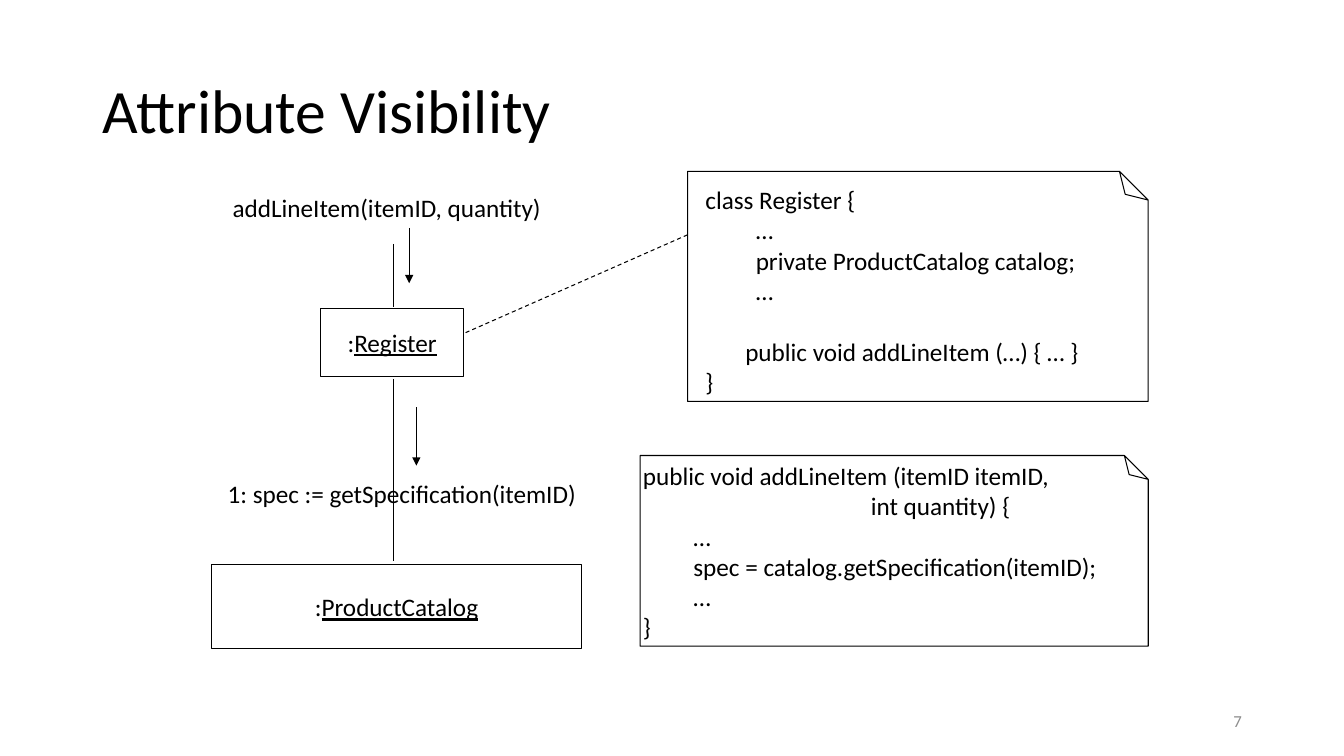
from lxml import etree
from pptx import Presentation
from pptx.dml.color import RGBColor
from pptx.enum.dml import MSO_LINE
from pptx.enum.shapes import MSO_CONNECTOR, MSO_SHAPE
from pptx.enum.text import MSO_ANCHOR, MSO_AUTO_SIZE, PP_ALIGN
from pptx.oxml.ns import qn
from pptx.util import Pt

DASH = MSO_LINE.DASH
LINE = MSO_CONNECTOR.STRAIGHT
RECT, NOTE = MSO_SHAPE.RECTANGLE, MSO_SHAPE.FOLDED_CORNER
MID = MSO_ANCHOR.MIDDLE
GROW, FIXED = MSO_AUTO_SIZE.SHAPE_TO_FIT_TEXT, MSO_AUTO_SIZE.NONE
LEFT, CENTER, RIGHT = PP_ALIGN.LEFT, PP_ALIGN.CENTER, PP_ALIGN.RIGHT

# Content: boxes are left, top, width, height in points
TITLE = "Attribute Visibility"
TITLE_BOX = (66, 28.8, 828, 104.4)
PAGE = "7"
PAGE_BOX = (678.24, 500.4, 216, 28.8)

# Code lines: text, indent, space before
CLASS_CODE = [
    ("class Register {", 0, 0),
    ("…", 36, 0),
    ("private ProductCatalog catalog;", 36, 0),
    ("…", 36, 0),
    ("public void addLineItem (…) { … }", 28.5, 22),
    ("}", 0, 0),
]
METHOD_CODE = [
    ("public void addLineItem (itemID itemID,", 0, 0),
    ("int quantity) {", 162.7, 0),
    ("…", 36, 0),
    ("spec = catalog.getSpecification(itemID);", 36, 0),
    ("…", 36, 0),
    ("}", 0, 0),
]
TEXTS = [
    (CLASS_CODE, (496.8, 128.2, 285.1, 159.8)),
    (METHOD_CODE, (452.2, 325.4, 342.7, 138.2)),
    ([("1: spec := getSpecification(itemID)", 0, 0)],
     (155.5, 338.4, 266.4, 28.8)),
    ([("addLineItem(itemID, quantity)", 0, 0)],
     (159.1, 133.9, 237.6, 28.8)),
]
NOTES = [(491.2, 122.4, 329, 164.4), (457.2, 325.4, 363, 136.1)]
OBJECTS = [
    ("Register", (229, 220.3, 102.2, 48.5)),
    ("ProductCatalog", (151.2, 403.2, 264.2, 60)),
]
NOTE_LINK = (332.6, 237.6, 491, 167.8)
LIFE_X = 280.8
LIFE_SPANS = [(174.2, 219.6), (270.7, 401)]
CALLS = [(292.3, 162.7, 202.3), (297.4, 290.9, 332.6)]  # x, top, bottom

THEME = {
    "font": "Calibri",
    "ink": RGBColor(0, 0, 0),
    "paper": RGBColor(255, 255, 255),
    "gray": RGBColor(0x8C, 0x8C, 0x8C),
    "title": 44, "body": 18, "small": 12, "line": 0.75,
}


def pts(box):
    return [Pt(v) for v in box]


def style(para, size="body", color="ink", align=LEFT):
    para.alignment = align
    for run in para.runs:
        run.font.name = THEME["font"]
        run.font.size = Pt(THEME[size])
        run.font.color.rgb = THEME[color]


def stroke(item):
    item.line.color.rgb = THEME["ink"]
    item.line.width = Pt(THEME["line"])


def add_code(slide, lines, box):
    frame = slide.shapes.add_textbox(*pts(box)).text_frame
    frame.word_wrap = False
    frame.auto_size = GROW
    frame.text = "\n".join(text for text, _, _ in lines)
    for para, (_, indent, gap) in zip(frame.paragraphs, lines):
        style(para)
        if indent:
            para._p.get_or_add_pPr().set("marL", str(Pt(indent)))
        if gap:
            para.space_before = Pt(gap)


def add_note(slide, box):
    note = slide.shapes.add_shape(NOTE, *pts(box))
    note.shadow.inherit = False
    note.fill.background()
    stroke(note)
    # Fold of one eighth, at the top right
    props = note._element.spPr
    props.find(qn("a:xfrm")).set("flipV", "1")
    geom = props.find(qn("a:prstGeom"))
    for old in list(geom):
        geom.remove(old)
    etree.SubElement(etree.SubElement(geom, qn("a:avLst")), qn("a:gd"),
                     name="adj", fmla="val 12500")


def add_object(slide, name, box):
    rect = slide.shapes.add_shape(RECT, *pts(box))
    rect.shadow.inherit = False
    rect.fill.solid()
    rect.fill.fore_color.rgb = THEME["paper"]
    stroke(rect)
    frame = rect.text_frame
    frame.word_wrap = False
    frame.vertical_anchor = MID
    para = frame.paragraphs[0]
    para.text = ":"
    label = para.add_run()
    label.text = name
    label.font.underline = True
    style(para, align=CENTER)


def add_line(slide, ends, arrow=False, dash=None):
    line = slide.shapes.add_connector(LINE, *pts(ends))
    stroke(line)
    if dash:
        line.line.dash_style = dash
    props = line._element.spPr
    if arrow:
        etree.SubElement(props.find(qn("a:ln")), qn("a:tailEnd"),
                         type="triangle")
    etree.SubElement(props, qn("a:effectLst"))


def main():
    deck = Presentation()
    deck.slide_width, deck.slide_height = Pt(960), Pt(540)
    slide = deck.slides.add_slide(deck.slide_layouts[5])

    # Title
    title = slide.shapes.title
    title.left, title.top, title.width, title.height = pts(TITLE_BOX)
    frame = title.text_frame
    frame.text = TITLE
    frame.auto_size = FIXED
    frame.vertical_anchor = MID
    frame.paragraphs[0].line_spacing = 0.9
    style(frame.paragraphs[0], "title")

    # Page number
    frame = slide.shapes.add_textbox(*pts(PAGE_BOX)).text_frame
    frame.word_wrap = True
    frame.vertical_anchor = MID
    frame.text = PAGE
    style(frame.paragraphs[0], "small", "gray", RIGHT)

    # Notes and the link to the class
    add_line(slide, NOTE_LINK, dash=DASH)
    for box in NOTES:
        add_note(slide, box)

    # Objects, lifelines and calls
    for name, box in OBJECTS:
        add_object(slide, name, box)
    for top, bottom in LIFE_SPANS:
        add_line(slide, (LIFE_X, top, LIFE_X, bottom))
    for x, top, bottom in CALLS:
        add_line(slide, (x, top, x, bottom), arrow=True)

    # Code and call labels
    for lines, box in TEXTS:
        add_code(slide, lines, box)

    deck.save("out.pptx")


if __name__ == "__main__":
    main()
